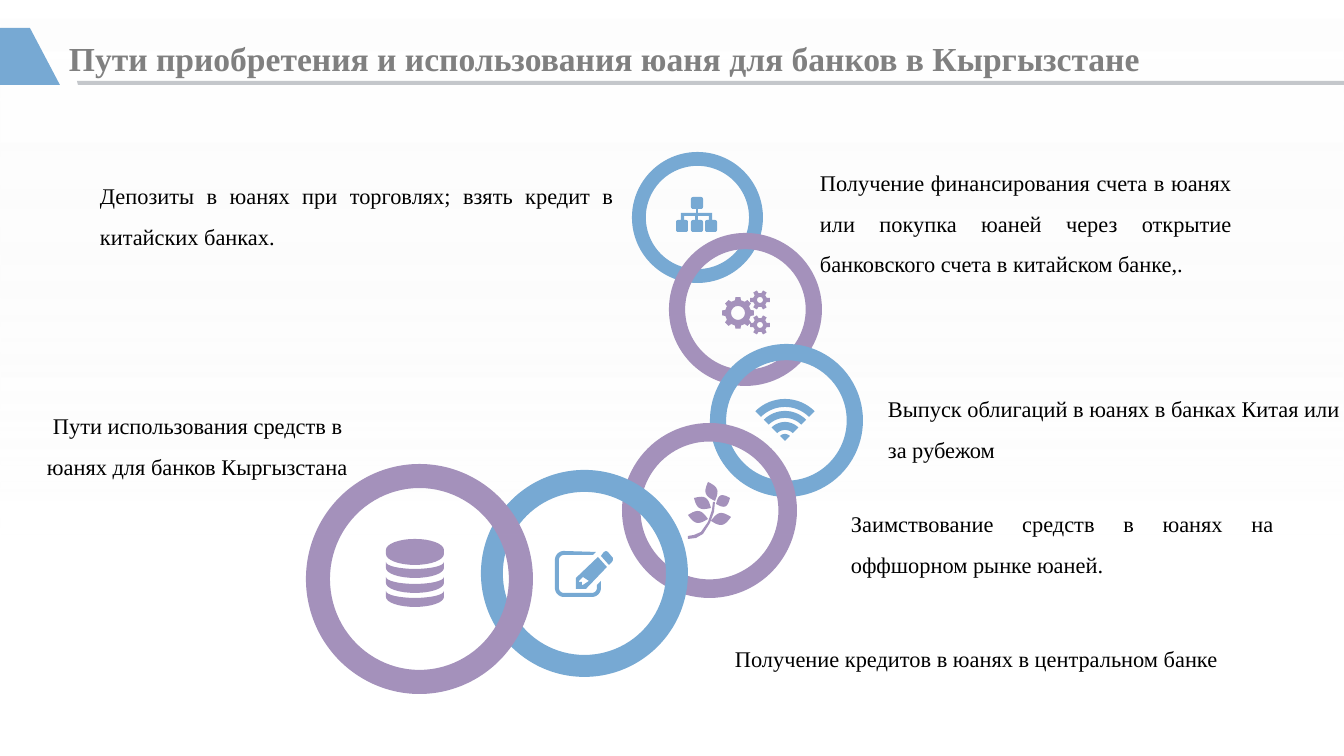
import math

import pptx
import pptx.dml.color
import pptx.enum.dml
import pptx.enum.shapes
import pptx.enum.text
import pptx.oxml
import pptx.oxml.ns
import pptx.util

WIDE, HIGH = 1344, 756
SCALE = 9144000 / WIDE
BLUE, MAUVE, GREY, BLACK = "77A9D3", "A491BB", "808080", "000000"
SHAPE = pptx.enum.shapes.MSO_SHAPE
ALIGN = pptx.enum.text.PP_ALIGN


def px(n):
    return pptx.util.Emu(round(n * SCALE))


def tint(color, code):
    color.rgb = pptx.dml.color.RGBColor.from_string(code)


def apply(target, values):
    for key, value in values.items():
        setattr(target, key, value)


def paint(shape, code):
    shape.shadow.inherit = False
    shape.line.fill.background()
    shape.fill.solid()
    tint(shape.fill.fore_color, code)


def draw(slide, left, top, loops, code):
    """Fill closed loops of points, placed from the given corner."""
    loops = [[(px(left + x), px(top + y)) for x, y in loop] for loop in loops]
    pen = slide.shapes.build_freeform(*loops[0][0], scale=1.0)
    for loop in loops:
        if loop is not loops[0]:
            pen.move_to(*loop[0])
        pen.add_line_segments(loop[1:], close=True)
    paint(pen.convert_to_shape(), code)


def write(slide, box, text, font, code, para, frame, indent=0):
    area = slide.shapes.add_textbox(*map(px, box)).text_frame
    apply(area, {"word_wrap": True, "margin_left": 0, "margin_right": 0, **frame})
    line = area.paragraphs[0]
    line.text = text
    apply(line, para)
    if indent:
        line._p.get_or_add_pPr().set("indent", str(px(indent)))
    style = line.runs[0].font
    apply(style, {"name": "Times New Roman", **font})
    tint(style.color, code)


# Outlines
def arc(cx, cy, rx, ry, start, end, steps=16):
    turns = [math.radians(start + (end - start) * i / steps) for i in range(steps + 1)]
    return [(cx + rx * math.cos(t), cy + ry * math.sin(t)) for t in turns]


def block(x, y, w, h, r):
    ends = [(x + w - r, y + h - r), (x + r, y + h - r), (x + r, y + r), (x + w - r, y + r)]
    return [p for i, (cx, cy) in enumerate(ends)
            for p in arc(cx, cy, r, r, 90 * i, 90 * i + 90, 4)]


def gear(cx, cy, tip, root, hole, teeth):
    step = 360 / teeth
    rim = []
    for i in range(teeth):
        for r, turn in ((root, -0.3), (tip, -0.2), (tip, 0.2), (root, 0.3)):
            rim += arc(cx, cy, r, r, (i + turn) * step, 0, 1)[:1]
    return [rim, arc(cx, cy, hole, hole, 0, 360)]


def leaf(x, y, tx, ty, bulge=6):
    dx, dy = tx - x, ty - y
    size = math.hypot(dx, dy)

    def edge(t, side):
        out = side * bulge * math.sin(math.pi * t) / size
        return x + dx * t - dy * out, y + dy * t + dx * out

    steps = [i / 10 for i in range(11)]
    return [edge(t, 1) for t in steps] + [edge(t, -1) for t in steps[::-1]]


# Icons
def tree():
    boxes = [(15, 0)] + [(x, 23) for x in (0, 15, 29)]
    bars = [(20, 12, 2, 4), (5, 16, 31, 3)] + [(x, 19, 3, 4) for x in (5, 19, 33)]
    return [block(x, y, 12, 12, 2) for x, y in boxes] + [block(*bar, 0) for bar in bars]


def gears():
    return gear(16, 22, 16, 13, 7, 8) + gear(38, 9, 10, 7, 3, 6) + gear(38, 34, 10, 7, 3, 6)


def waves():
    bands = [(42, 34), (30, 23), (19, 11)]
    rings = [arc(30, 42, a, a, 225, 315) + arc(30, 42, b, b, 315, 225) for a, b in bands]
    return rings + [arc(30, 42, 7, 7, 225, 315) + [(30, 42)]]


def twig():
    leaves = [(28, 19, 21, 0), (24, 26, 7, 16), (29, 22, 43, 16), (21, 37, 1, 33), (24, 39, 44, 35)]
    stem = [(26, 20), (25, 28), (21, 40), (14, 50), (7, 53), (1, 54), (1, 57),
            (9, 56), (16, 52), (23, 41), (27, 30), (28, 20)]
    return [leaf(*ends) for ends in leaves] + [stem]


def note():
    bends = [(9, 10, 270, 180), (9, 38, 180, 90), (37, 38, 90, 0)]
    outer = [p for x, y, a, b in bends for p in arc(x, y, 9, 9, a, b)]
    inner = [p for x, y, a, b in bends[::-1] for p in arc(x, y, 5, 5, b, a)]
    return [[(41, 2)] + outer + [(46, 31), (42, 35)] + inner + [(38, 5)],
            [(52, 17), (31, 39), (21, 39), (21, 28), (43, 7)],
            [(34, 31), (28, 27), (24, 31), (24, 32), (27, 32), (27, 35), (28, 35)],
            [(54, 15), (46, 6), (49, 2), (51, 1), (53, 2), (58, 8), (58, 10), (57, 12)]]


def disks():
    loops = [arc(29, 11, 29, 11, 180, 360) + arc(29, 15, 29, 11, 0, 180)]
    for y in (23, 38, 52):
        loops.append(arc(29, y, 29, 7, 180, 0) + arc(29, y + 6, 29, 10, 0, 180))
    return loops


# Regions
def backdrop(slide, box):
    shape = slide.shapes.add_shape(SHAPE.RECTANGLE, *map(px, box))
    paint(shape, "FFFFFF")
    shape.fill.gradient()
    shape.fill.gradient_angle = 270
    for stop, (place, code) in zip(shape.fill.gradient_stops, ((0, "FFFFFF"), (0.71, "F2F2F2"))):
        stop.position = place
        tint(stop.color, code)
    marks = shape.fill._xPr.findall(".//" + pptx.oxml.ns.qn("a:srgbClr"))
    for mark, alpha in zip(marks, (55000, 0)):
        space = pptx.oxml.ns.nsdecls("a")
        mark.append(pptx.oxml.parse_xml(f'<a:alpha {space} val="{alpha}"/>'))


def header(slide, box):
    x, y, w, h = box
    draw(slide, x, y, [[(77, h - 4), (w, h - 4), (w, h), (78, h)]], "C4C7CB")
    draw(slide, x, y, [[(0, 0), (30, 0), (60, h), (0, h)]], BLUE)
    write(slide, (x + 69, y + 2, 1101, h),
          "Пути приобретения и использования юаня для банков в Кыргызстане",
          {"size": pptx.util.Pt(18), "bold": True}, GREY, {},
          {"vertical_anchor": pptx.enum.text.MSO_ANCHOR.MIDDLE})


def chain(slide, box):
    x, y = box[:2]
    links = [(326, 0, 131, 131, tree, 370, 45), (363, 81, 153, 153, gears, 416, 139),
             (404, 192, 153, 153, waves, 449, 247), (316, 271, 175, 175, twig, 381, 330),
             (175, 318, 207, 207, note, 249, 398), (0, 312, 227, 230, disks, 80, 387)]
    for i, (left, top, w, h, icon, ix, iy) in enumerate(links):
        code = (BLUE, MAUVE)[i % 2]
        ring = slide.shapes.add_shape(SHAPE.DONUT, px(x + left), px(y + top), px(w), px(h))
        ring.adjustments[0] = 0.106
        paint(ring, code)
        draw(slide, x + ix, y + iy, icon(), code)


def notes(slide, box):
    x, y = box[:2]
    left, both = ALIGN.LEFT, ALIGN.JUSTIFY
    items = [
        (735, 632, 543, 40, left, 0, "Получение кредитов в юанях в центральном банке"),
        (888, 382, 456, 82, left, 0, "Выпуск облигаций в юанях в банках Китая или за рубежом"),
        (47, 399, 317, 82, left, 6,
         "Пути использования средств в юанях для банков Кыргызстана"),
        (820, 156, 412, 122, both, 0, "Получение финансирования счета в юанях или покупка юаней "
         "через открытие банковского счета в китайском банке,."),
        (100, 169, 514, 116, both, 0,
         "Депозиты в юанях при торговлях; взять кредит в китайских банках."),
        (851, 497, 423, 77, both, 0, "Заимствование средств в юанях на оффшорном рынке юаней."),
    ]
    frame = {"margin_top": 0, "margin_bottom": 0,
             "auto_size": pptx.enum.text.MSO_AUTO_SIZE.SHAPE_TO_FIT_TEXT}
    for dx, dy, w, h, align, indent, text in items:
        write(slide, (x + dx, y + dy, w, h), text, {"size": pptx.util.Pt(12)}, BLACK,
              {"alignment": align, "line_spacing": 1.5}, frame, indent)


def main():
    deck = pptx.Presentation()
    apply(deck, {"slide_width": px(WIDE), "slide_height": px(HIGH)})
    slide = deck.slides.add_slide(deck.slide_layouts[6])
    backdrop(slide, (0, 0, WIDE, HIGH))
    header(slide, (0, 28, WIDE, 57))
    chain(slide, (306, 152, 557, 542))
    notes(slide, (0, 0, WIDE, HIGH))
    deck.save("out.pptx")


if __name__ == "__main__":
    main()
